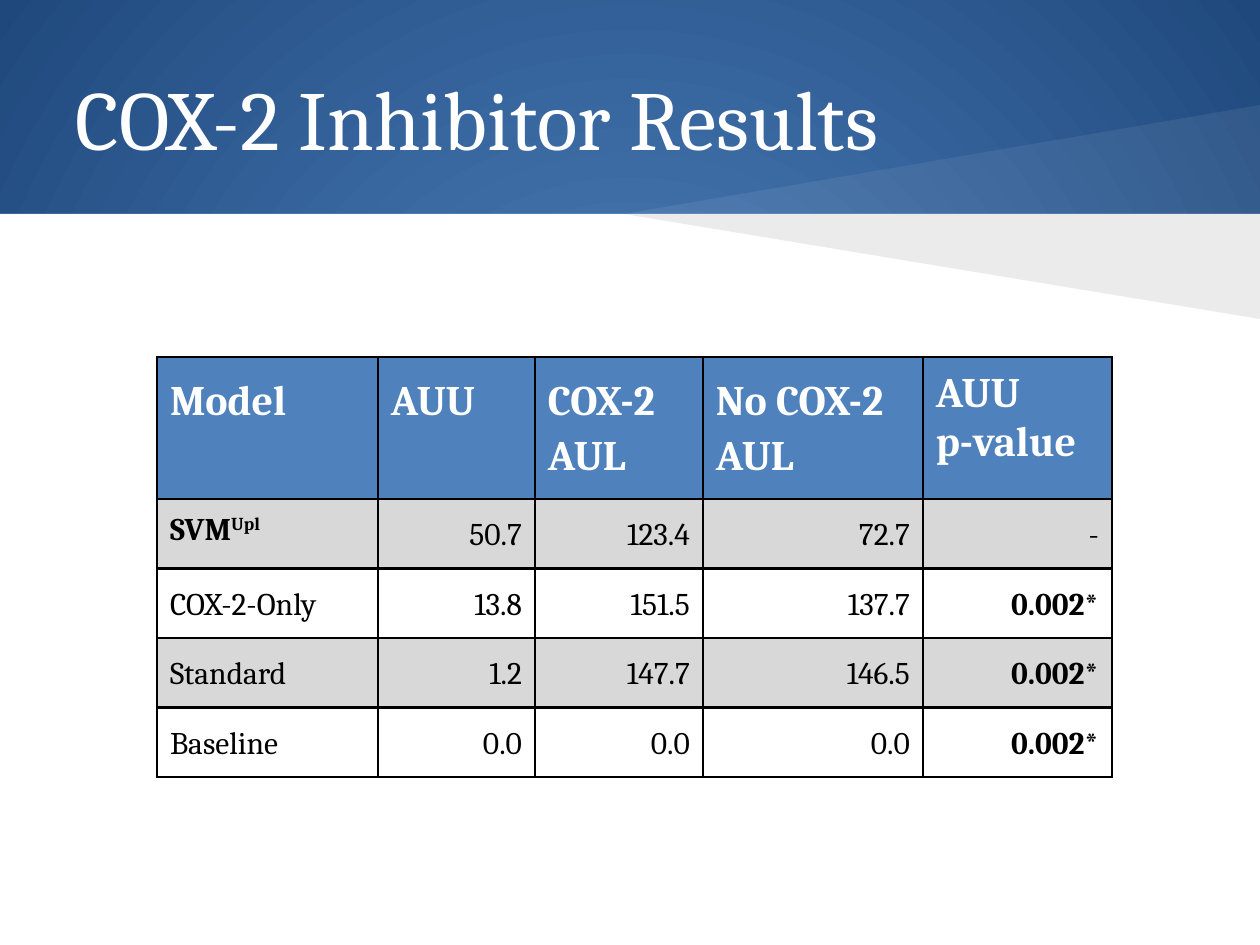
from dataclasses import dataclass

from lxml.etree import SubElement
from pptx import Presentation
from pptx.dml.color import RGBColor
from pptx.enum.shapes import MSO_SHAPE
from pptx.enum.text import MSO_ANCHOR, PP_ALIGN
from pptx.oxml.ns import qn
from pptx.util import Emu, Pt

EMU_PER_PX = 914400 / 126
SLIDE_WIDTH, SLIDE_HEIGHT = 1260, 945
BAND_HEIGHT = 214
INSET = 13


@dataclass(frozen=True)
class Theme:
    font: str = "Cambria"
    blue: str = "4F81BD"
    navy: str = "1F497D"
    white: str = "FFFFFF"
    black: str = "000000"
    gray: str = "D8D8D8"
    title_size: int = 48
    header_size: int = 24
    body_size: int = 18
    border_width: float = 1.5
    line_spacing: float = 1.15


THEME = Theme()

HEADERS = ["Model", "AUU", "COX-2\nAUL", "No COX-2\nAUL", "AUU\np-value"]
RESULTS = [
    ["SVM", "50.7", "123.4", "72.7", "-"],
    ["COX-2-Only", "13.8", "151.5", "137.7", "0.002*"],
    ["Standard", "1.2", "147.7", "146.5", "0.002*"],
    ["Baseline", "0.0", "0.0", "0.0", "0.002*"],
]
COLUMN_WIDTHS = [221, 157, 168, 220, 189]
HEADER_HEIGHT, ROW_HEIGHT = 88, 52


def px(length):
    return Emu(round(length * EMU_PER_PX))


def rgb(color):
    return RGBColor.from_string(color)


def add_text(paragraph, text, *, size=THEME.body_size, color=THEME.black,
             bold=False, align=PP_ALIGN.LEFT, spacing=None, baseline=None):
    paragraph.alignment = align
    if spacing:
        paragraph.line_spacing = spacing
    run = paragraph.add_run()
    run.text = text
    run.font.name = THEME.font
    run.font.size = Pt(size)
    run.font.bold = bold
    run.font.color.rgb = rgb(color)
    if baseline:
        run.font._element.set("baseline", str(baseline * 1000))


def set_insets(target):
    target.margin_left = target.margin_right = px(INSET)
    target.margin_top = target.margin_bottom = px(INSET)


def paint(shape, color, opacity=100):
    shape.shadow.inherit = False
    shape.line.fill.background()
    shape.fill.solid()
    shape.fill.fore_color.rgb = rgb(color)
    if opacity < 100:
        color_element = shape._element.spPr.find(".//" + qn("a:srgbClr"))
        SubElement(color_element, qn("a:alpha"), val=str(opacity * 1000))


def set_radial_background(slide):
    fill = slide.background.fill
    fill.gradient()
    for stop, color in zip(fill.gradient_stops, (THEME.blue, THEME.navy)):
        stop.color.rgb = rgb(color)
    gradient = slide._element.find(".//" + qn("a:gradFill"))
    gradient.remove(gradient.find(qn("a:lin")))
    circle = SubElement(gradient, qn("a:path"), path="circle")
    center = {side: "50000" for side in "ltrb"}
    SubElement(circle, qn("a:fillToRect"), **center)


def add_wedge(slide, outer_y, color, opacity):
    """Triangle from the band's edge to the right side of the slide."""
    builder = slide.shapes.build_freeform(SLIDE_WIDTH, BAND_HEIGHT, scale=EMU_PER_PX)
    builder.add_line_segments([(624, BAND_HEIGHT), (SLIDE_WIDTH, outer_y)], close=True)
    paint(builder.convert_to_shape(), color, opacity)


def add_title(slide, text):
    box = slide.shapes.add_textbox(px(63), px(38), px(1134), px(158))
    frame = box.text_frame
    frame.word_wrap = True
    frame.vertical_anchor = MSO_ANCHOR.MIDDLE
    set_insets(frame)
    add_text(frame.paragraphs[0], text, size=THEME.title_size, color=THEME.white)


def style_cell(cell, fill_color):
    set_insets(cell)
    properties = cell._tc.get_or_add_tcPr()
    for side in ("lnL", "lnR", "lnT", "lnB"):
        line = SubElement(properties, qn(f"a:{side}"), w=str(Pt(THEME.border_width)))
        solid = SubElement(line, qn("a:solidFill"))
        SubElement(solid, qn("a:srgbClr"), val=THEME.black)
    cell.fill.solid()
    cell.fill.fore_color.rgb = rgb(fill_color)


def fill_header(cell, text, spacing):
    style_cell(cell, THEME.blue)
    frame = cell.text_frame
    for index, line in enumerate(text.split("\n")):
        paragraph = frame.add_paragraph() if index else frame.paragraphs[0]
        add_text(paragraph, line, size=THEME.header_size, color=THEME.white,
                 bold=True, spacing=spacing)


def add_results_table(slide):
    graphic_frame = slide.shapes.add_table(
        len(RESULTS) + 1, len(HEADERS), px(157), px(357), px(sum(COLUMN_WIDTHS)), px(416))
    table = graphic_frame.table
    table.first_row = table.horz_banding = False
    for column, width in zip(table.columns, COLUMN_WIDTHS):
        column.width = px(width)
    for index, row in enumerate(table.rows):
        row.height = px(ROW_HEIGHT if index else HEADER_HEIGHT)

    # Header row: the last column keeps single line spacing
    last = len(HEADERS) - 1
    for column, text in enumerate(HEADERS):
        fill_header(table.cell(0, column), text,
                    None if column == last else THEME.line_spacing)

    # Result rows: alternating fills, bold p-values
    for row, values in enumerate(RESULTS, start=1):
        for column, text in enumerate(values):
            cell = table.cell(row, column)
            style_cell(cell, THEME.gray if row % 2 else THEME.white)
            paragraph = cell.text_frame.paragraphs[0]
            if text == "SVM":
                add_text(paragraph, text, bold=True)
                add_text(paragraph, "Upl", bold=True, baseline=30)
            else:
                add_text(paragraph, text, bold=column == last and text != "-",
                         align=PP_ALIGN.RIGHT if column else PP_ALIGN.LEFT,
                         spacing=THEME.line_spacing)


def main():
    presentation = Presentation()
    presentation.slide_width = px(SLIDE_WIDTH)
    presentation.slide_height = px(SLIDE_HEIGHT)
    slide = presentation.slides.add_slide(presentation.slide_layouts[6])

    # Backdrop: radial band, white body and two translucent wedges
    set_radial_background(slide)
    body = slide.shapes.add_shape(MSO_SHAPE.RECTANGLE, 0, px(BAND_HEIGHT),
                                  px(SLIDE_WIDTH), px(SLIDE_HEIGHT - BAND_HEIGHT))
    paint(body, THEME.white)
    add_wedge(slide, 105, THEME.white, 7)
    add_wedge(slide, 319, THEME.black, 8)

    # Content
    add_title(slide, "COX-2 Inhibitor Results")
    add_results_table(slide)
    presentation.save("out.pptx")


if __name__ == "__main__":
    main()
